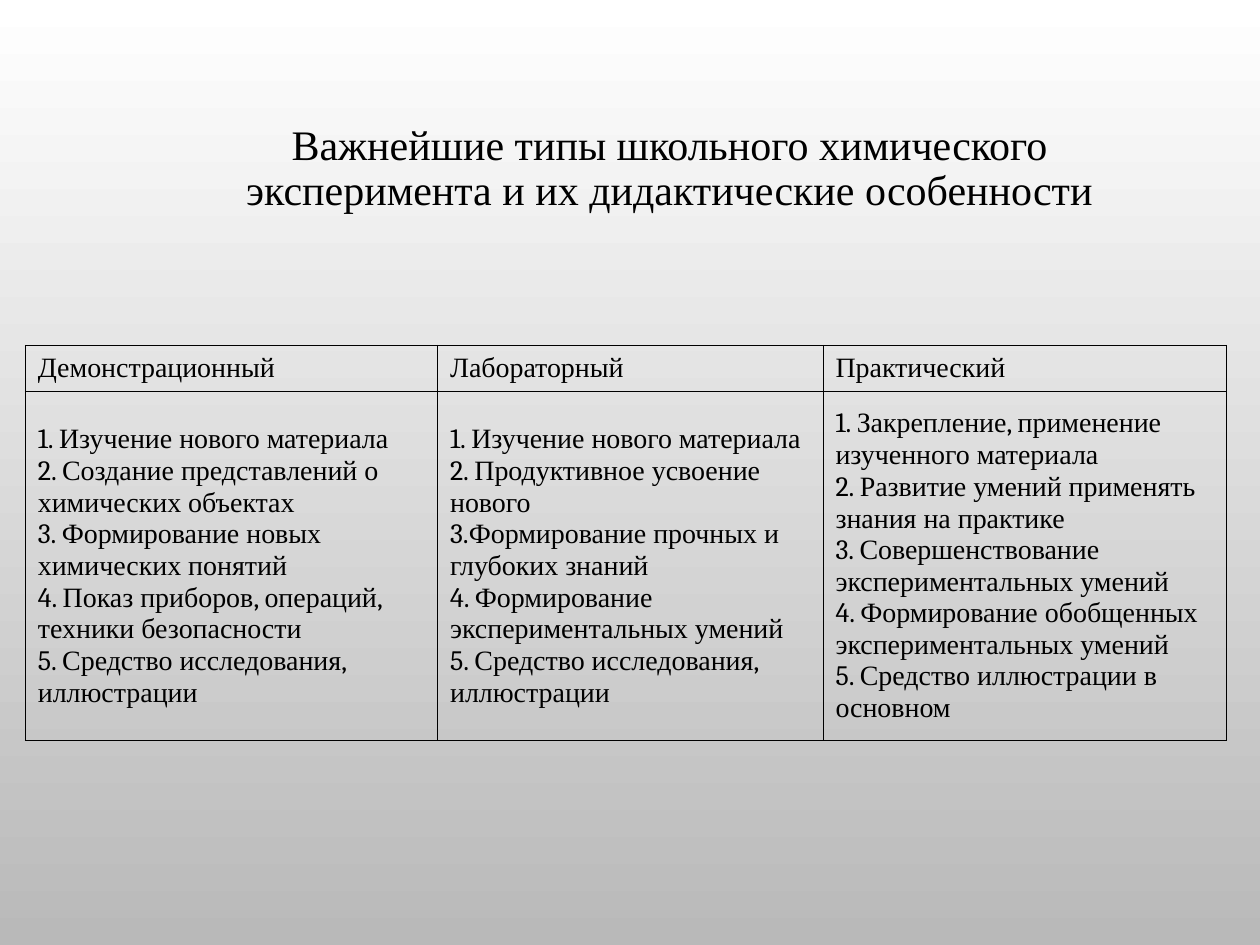
from itertools import groupby

from lxml.etree import SubElement
from pptx import Presentation
from pptx.dml.color import RGBColor
from pptx.enum.text import MSO_ANCHOR, PP_ALIGN
from pptx.oxml.ns import qn
from pptx.util import Cm, Pt

COLORS = {"text": "000000", "border": "000000", "top": "FFFFFF", "bottom": "B9B9B9"}

TITLE = "Важнейшие типы школьного химического эксперимента и их дидактические особенности"

EXPERIMENTS = {
    "Демонстрационный": [
        "1. Изучение нового материала",
        "2. Создание представлений о химических объектах",
        "3. Формирование новых химических понятий",
        "4. Показ приборов, операций, техники безопасности",
        "5. Средство исследования, иллюстрации",
    ],
    "Лабораторный": [
        "1. Изучение нового материала",
        "2. Продуктивное усвоение нового",
        "3.Формирование прочных и глубоких знаний",
        "4. Формирование экспериментальных умений",
        "5. Средство исследования, иллюстрации",
    ],
    "Практический": [
        "1. Закрепление, применение изученного материала",
        "2. Развитие умений применять знания на практике",
        "3. Совершенствование экспериментальных умений",
        "4. Формирование обобщенных экспериментальных умений",
        "5. Средство иллюстрации в основном",
    ],
}


class SlideBuilder:
    letter_font = "Times New Roman"
    number_font = "Cambria"
    title_size = Pt(24)
    cell_size = Pt(16)
    border_width = Pt(0.5)

    def __init__(self, page):
        self.page = page

    def background(self):
        fill = self.page.background.fill
        fill.gradient()
        fill.gradient_angle = 270
        for stop, name in zip(fill.gradient_stops, ("top", "bottom")):
            stop.color.rgb = RGBColor.from_string(COLORS[name])

    def style(self, span, font, size):
        span.font.name = font
        span.font.size = size
        span.font.color.rgb = RGBColor.from_string(COLORS["text"])

    def title(self, text, left, top, width, height):
        frame = self.page.shapes.add_textbox(left, top, width, height).text_frame
        frame.word_wrap = True
        frame.vertical_anchor = MSO_ANCHOR.MIDDLE
        frame.margin_bottom = Cm(1.15)
        frame.text = text
        para = frame.paragraphs[0]
        para.alignment = PP_ALIGN.CENTER
        para.line_spacing = 0.9
        self.style(para.runs[0], self.letter_font, self.title_size)

    def mixed_text(self, para, text):
        def font_at(index):
            mark = text[index].strip() or text[index - 1]
            return self.number_font if mark.isdigit() or mark in ".," else self.letter_font

        for font, places in groupby(range(len(text)), font_at):
            span = para.add_run()
            span.text = "".join(text[place] for place in places)
            self.style(span, font, self.cell_size)

    def borders(self, cell):
        properties = cell._tc.get_or_add_tcPr()
        for side in ("a:lnL", "a:lnR", "a:lnT", "a:lnB"):
            line = SubElement(properties, qn(side), w=str(self.border_width))
            solid = SubElement(line, qn("a:solidFill"))
            SubElement(solid, qn("a:srgbClr"), val=COLORS["border"])

    def cell(self, cell, lines):
        self.borders(cell)
        cell.fill.background()
        cell.vertical_anchor = MSO_ANCHOR.MIDDLE
        frame = cell.text_frame
        for index, line in enumerate(lines):
            para = frame.add_paragraph() if index else frame.paragraphs[0]
            self.mixed_text(para, line)

    def table(self, columns, left, top, widths, heights):
        frame = self.page.shapes.add_table(
            len(heights), len(widths), left, top, sum(widths), sum(heights)
        )
        table = frame.table
        table.first_row = False
        table.horz_banding = False
        for row, height in zip(table.rows, heights):
            row.height = height
        for index, (heading, items) in enumerate(columns.items()):
            table.columns[index].width = widths[index]
            self.cell(table.cell(0, index), [heading])
            self.cell(table.cell(1, index), items)


def main():
    deck = Presentation()
    deck.slide_width, deck.slide_height = Cm(25.4), Cm(19.05)
    builder = SlideBuilder(deck.slides.add_slide(deck.slide_layouts[6]))
    builder.background()
    builder.title(TITLE, Cm(3.5), Cm(1.73), Cm(20), Cm(4.4))
    builder.table(
        EXPERIMENTS,
        Cm(0.51),
        Cm(6.96),
        [Cm(8.31), Cm(7.77), Cm(8.13)],
        [Cm(0.89), Cm(6.63)],
    )
    deck.save("out.pptx")


if __name__ == "__main__":
    main()
